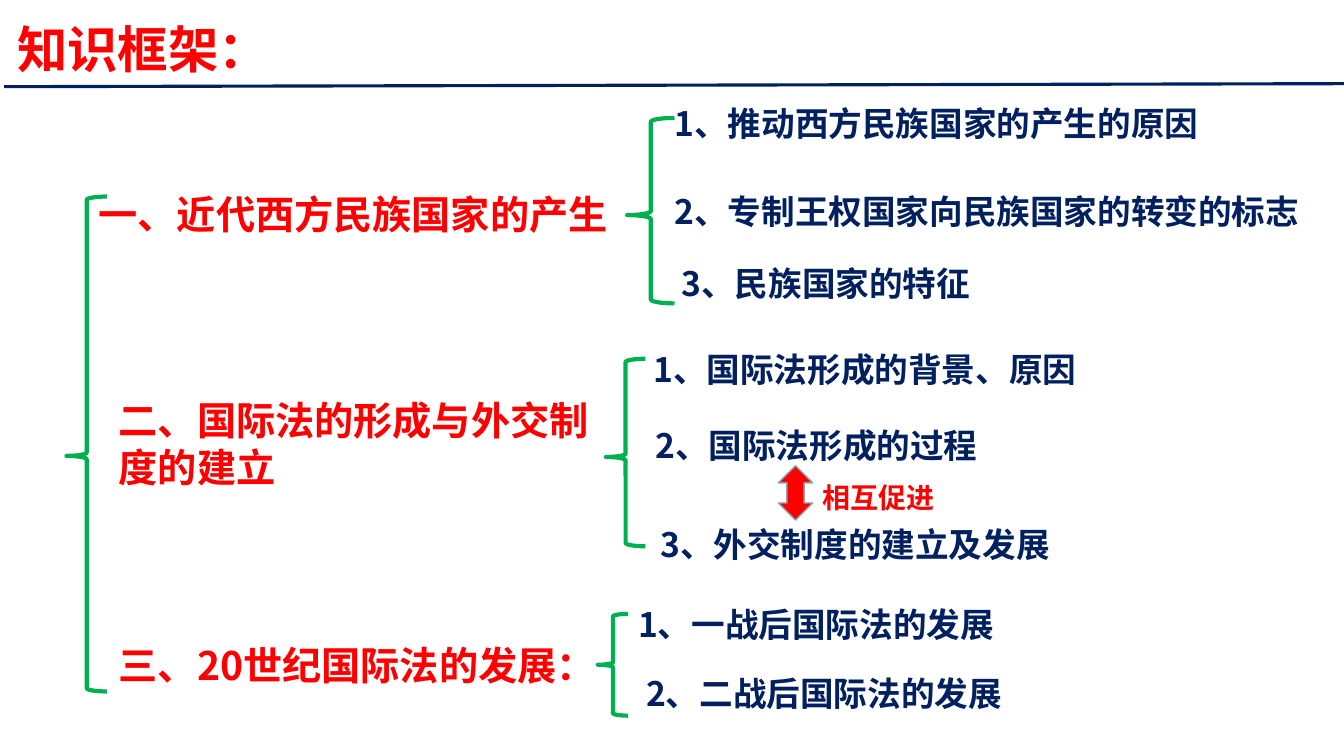
from lxml import etree
from pptx import Presentation
from pptx.dml.color import RGBColor
from pptx.enum.shapes import MSO_CONNECTOR, MSO_SHAPE
from pptx.enum.text import MSO_ANCHOR, PP_ALIGN
from pptx.oxml.ns import qn
from pptx.util import Pt

PX = 9144  # 100 px to the inch
STRAIGHT = MSO_CONNECTOR.STRAIGHT
LEFT_BRACE = MSO_SHAPE.LEFT_BRACE
UP_DOWN_ARROW = MSO_SHAPE.UP_DOWN_ARROW
MIDDLE = MSO_ANCHOR.MIDDLE
LEFT = PP_ALIGN.LEFT

RED, NAVY, GREEN, GREY = "FF0000", "002060", "00B050", "8AA6A8"
BODY_FONT, TITLE_FONT = "Noto Sans CJK SC", "Noto Sans CJK JP"
POINT_HEIGHT = 50
LOW_TIP = 0.524

# Boxes are left, top, width, height; the parts of a branch count from its origin
BRANCHES = [
    {
        "origin": (88, 97),
        "heading": ("一、近代西方民族国家的产生", (0, 87, 533, 57), False),
        "brace": ((534, 20, 47, 184), LOW_TIP),
        "points": [
            ("1、推动西方民族国家的产生的原因", 571, 0, 599),
            ("2、专制王权国家向民族国家的转变的标志", 571, 87, 665),
            ("3、民族国家的特征", 578, 159, 348),
        ],
    },
    {
        "origin": (108, 341),
        "heading": ("二、国际法的形成与外交制度的建立", (0, 47, 493, 104), True),
        "brace": ((493, 15, 39, 186), LOW_TIP),
        "points": [
            ("1、国际法形成的背景、原因", 530, 0, 485),
            ("2、国际法形成的过程", 532, 76, 374),
            ("3、外交制度的建立及发展", 537, 174, 438),
        ],
    },
    {
        "origin": (108, 594),
        "heading": ("三、20世纪国际法的发展：", (0, 37, 494, 57), False),
        "brace": ((485, 15, 30, 101), 0.5),
        "points": [
            ("1、一战后国际法的发展", 515, 0, 391),
            ("2、二战后国际法的发展", 523, 69, 383),
        ],
    },
]


def color(hex_value):
    return RGBColor.from_string(hex_value)


def emu(*lengths):
    return [length * PX for length in lengths]


def shifted(origin, box):
    return (origin[0] + box[0], origin[1] + box[1], box[2], box[3])


def add_run(paragraph, text, size, hex_value, font_name=BODY_FONT):
    run = paragraph.add_run()
    run.text = text
    font = run.font
    font.size, font.bold, font.name = Pt(size), True, font_name
    font.color.rgb = color(hex_value)
    east_asian = etree.SubElement(run._r.get_or_add_rPr(), qn("a:ea"))
    east_asian.set("typeface", font_name)


def add_label(slide, text, box, size, hex_value, wrap=True):
    frame = slide.shapes.add_textbox(*emu(*box)).text_frame
    frame.word_wrap = wrap
    add_run(frame.paragraphs[0], text, size, hex_value)


def add_brace(slide, box, tip):
    brace = slide.shapes.add_shape(LEFT_BRACE, *emu(*box))
    brace.shadow.inherit = False
    brace.adjustments[1] = tip
    brace.fill.background()
    brace.line.color.rgb = color(GREEN)
    brace.line.width = Pt(3)


# Title with the rule under it
def add_header(slide, box):
    title = slide.shapes.title
    title.left, title.top, title.width, title.height = emu(*box)
    frame = title.text_frame
    frame.word_wrap = True
    frame.vertical_anchor = MIDDLE
    frame.margin_left, frame.margin_right = emu(7, 7)
    frame.margin_top, frame.margin_bottom = emu(4, 4)
    heading = frame.paragraphs[0]
    heading.alignment = LEFT
    heading.line_spacing = 0.9
    add_run(heading, "知识框架：", 36, RED, TITLE_FONT)

    left, top = box[:2]
    rule = slide.shapes.add_connector(
        STRAIGHT, *emu(left - 6, top + 63, left + 1324, top + 60))
    rule.line.color.rgb = color(NAVY)
    rule.line.width = Pt(2.25)
    etree.SubElement(rule._element.spPr, qn("a:effectLst"))


# One section: heading, brace and its points
def add_branch(slide, origin, heading, brace, points):
    heading_text, heading_box, wrap = heading
    add_label(slide, heading_text, shifted(origin, heading_box), 28, RED, wrap)
    brace_box, tip = brace
    add_brace(slide, shifted(origin, brace_box), tip)
    for text, left, top, width in points:
        point_box = shifted(origin, (left, top, width, POINT_HEIGHT))
        add_label(slide, text, point_box, 24, NAVY)


# Double arrow with its label to the right
def add_mutual_link(slide, box):
    left, top, width, _ = box
    arrow = slide.shapes.add_shape(UP_DOWN_ARROW, *emu(*box))
    arrow.shadow.inherit = False
    arrow.fill.solid()
    arrow.fill.fore_color.rgb = color(RED)
    arrow.line.color.rgb = color(GREY)
    arrow.line.width = Pt(1)
    add_label(slide, "相互促进", (left + width, top + 10, 133, 44), 20, RED, False)


def main():
    deck = Presentation()
    deck.slide_width, deck.slide_height = emu(1333, 750)
    slide = deck.slides.add_slide(deck.slide_layouts[5])
    add_header(slide, (10, 23, 258, 58))
    for branch in BRANCHES:
        add_branch(slide, **branch)
    add_mutual_link(slide, (772, 462, 34, 54))
    add_brace(slide, (66, 195, 40, 491), LOW_TIP)
    deck.save("out.pptx")


if __name__ == "__main__":
    main()
